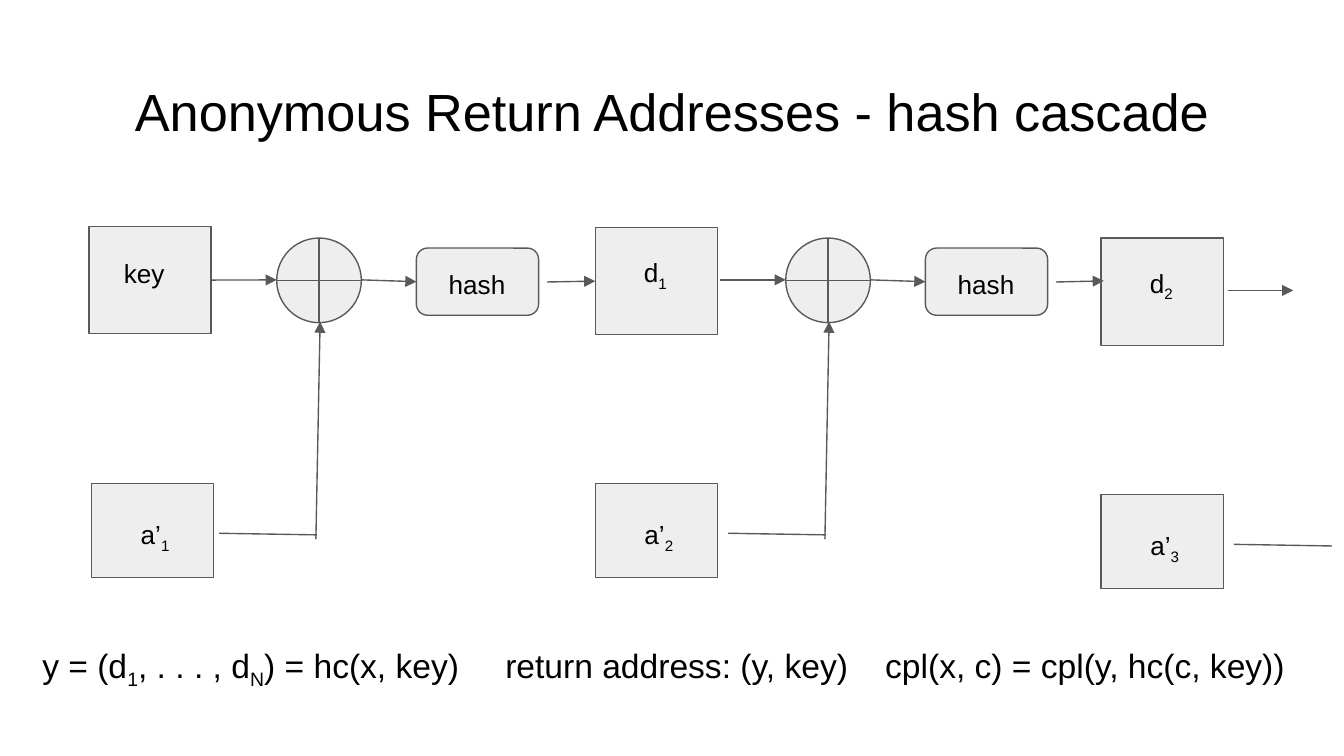
from dataclasses import dataclass

from lxml import etree
from pptx import Presentation
from pptx import util as u
from pptx.dml.color import RGBColor
from pptx.enum import shapes, text
from pptx.oxml.ns import qn

BLACK, GREY, PALE = "000000", "595959", "EEEEEE"
FONT = "Arial"
BOX_W = 2.31
KEY_H, ADDRESS_H = 2.03, 1.78
STAGE_STEP = 9.62
ADDER_SIZE = 1.6


@dataclass
class Box:
    """A labelled rectangle; dx and dy place its label inside it, in cm."""
    x: float
    y: float
    h: float
    label: str
    dx: float
    dy: float
    label_w: float = 1.24


def colour(code: str) -> RGBColor:
    return RGBColor.from_string(code)


def add_shape(slide, kind, x: float, y: float, w: float, h: float):
    shape = slide.shapes.add_shape(kind, u.Cm(x), u.Cm(y), u.Cm(w), u.Cm(h))
    shape.shadow.inherit = False
    shape.fill.solid()
    shape.fill.fore_color.rgb = colour(PALE)
    shape.line.color.rgb = colour(GREY)
    shape.line.width = u.Pt(0.75)
    return shape


def add_text(slide, x: float, y: float, w: float, h: float, wording: str, size: int):
    """Write the wording, with every part between underscores as a subscript."""
    frame = slide.shapes.add_textbox(u.Cm(x), u.Cm(y), u.Cm(w), u.Cm(h)).text_frame
    frame.word_wrap = True
    frame.vertical_anchor = text.MSO_ANCHOR.TOP
    frame.margin_left = frame.margin_right = u.Cm(0.25)
    frame.margin_top = frame.margin_bottom = u.Cm(0.25)
    paragraph = frame.paragraphs[0]
    paragraph.font.name = FONT
    paragraph.font.size = u.Pt(size)
    paragraph.font.color.rgb = colour(BLACK)
    for i, part in enumerate(wording.split("_")):
        if part:
            run = paragraph.add_run()
            run.text = part
            if i % 2:
                run.font._element.set("baseline", "-25000")
    return paragraph


def add_tab_stops(paragraph, stops: list[float]) -> None:
    tabs = etree.Element(qn("a:tabLst"))
    for stop in stops:
        etree.SubElement(tabs, qn("a:tab"), pos=str(int(u.Cm(stop))), algn="l")
    paragraph._p.pPr.find(qn("a:defRPr")).addprevious(tabs)


def add_line(slide, x1: float, y1: float, x2: float, y2: float, arrow: bool = True):
    line = slide.shapes.add_connector(
        shapes.MSO_CONNECTOR.STRAIGHT, u.Cm(x1), u.Cm(y1), u.Cm(x2), u.Cm(y2))
    line.line.color.rgb = colour(GREY)
    line.line.width = u.Pt(0.75)
    if arrow:
        etree.SubElement(line.line._get_or_add_ln(), qn("a:tailEnd"), type="triangle")
    etree.SubElement(line._element.spPr, qn("a:effectLst"))
    return line


def add_box(slide, box: Box):
    shape = add_shape(slide, shapes.MSO_SHAPE.RECTANGLE, box.x, box.y, BOX_W, box.h)
    add_text(slide, box.x + box.dx, box.y + box.dy, box.label_w, 1.37, box.label, 14)
    return shape


def add_stage(slide, shift: float):
    """Draw one adder and hash step; return its incoming and outgoing arrows."""
    add_shape(slide, shapes.MSO_SHAPE.FLOWCHART_OR, 5.23 + shift, 4.5,
              ADDER_SIZE, ADDER_SIZE)
    hash_box = add_shape(slide, shapes.MSO_SHAPE.ROUNDED_RECTANGLE,
                         7.87 + shift, 4.69, BOX_W, 1.27)
    add_text(slide, 8.23 + shift, 4.83, 2.11, 0.99, "hash", 14)
    incoming = add_line(slide, 3.99 + shift, 5.29, 5.23 + shift, 5.29)
    add_line(slide, 6.83 + shift, 5.29, 7.87 + shift, 5.33).end_connect(hash_box, 1)
    outgoing = add_line(slide, 10.34 + shift, 5.33, 11.24 + shift, 5.31)
    add_line(slide, 4.14 + shift, 10.08, 5.99 + shift, 10.11, arrow=False)
    add_line(slide, 5.97 + shift, 10.19, 6.05 + shift, 6.08)
    return incoming, outgoing


def main() -> None:
    deck = Presentation()
    deck.slide_width, deck.slide_height = u.Cm(25.4), u.Cm(14.29)
    slide = deck.slides.add_slide(deck.slide_layouts[6])

    title = add_text(slide, 0.86, 1.24, 23.67, 1.6,
                     "Anonymous Return Addresses - hash cascade", 28)
    title.alignment = text.PP_ALIGN.CENTER

    key = add_box(slide, Box(1.68, 4.28, KEY_H, "key", 0.41, 0.34, 1.6))
    digest = add_box(slide, Box(11.25, 4.3, KEY_H, "d_1_", 0.67, 0.3))
    add_box(slide, Box(20.81, 4.5, KEY_H, "d_2_", 0.67, 0.3))
    for number, (x, y) in enumerate([(1.73, 9.14), (11.25, 9.14), (20.81, 9.35)], 1):
        add_box(slide, Box(x, y, ADDRESS_H, f"a’_{number}_", 0.68, 0.41, 1.35))

    from_key, to_digest = add_stage(slide, 0)
    from_key.begin_connect(key, 3)
    to_digest.end_connect(digest, 1)
    add_stage(slide, STAGE_STEP)

    add_line(slide, 23.2, 5.49, 24.44, 5.49)
    add_line(slide, 23.32, 10.29, 25.17, 10.32, arrow=False)

    formulas = add_text(
        slide, 0.55, 11.81, 24.36, 1.37,
        "y = (d_1_, . . . , d_N_) = hc(x, key)\treturn address: (y, key)"
        "\tcpl(x, c) = cpl(y, hc(c, key))", 18)
    formulas.line_spacing = 1.15
    formulas.space_after = u.Pt(16)
    add_tab_stops(formulas, [8.75, 15.93])

    deck.save("out.pptx")


if __name__ == "__main__":
    main()
